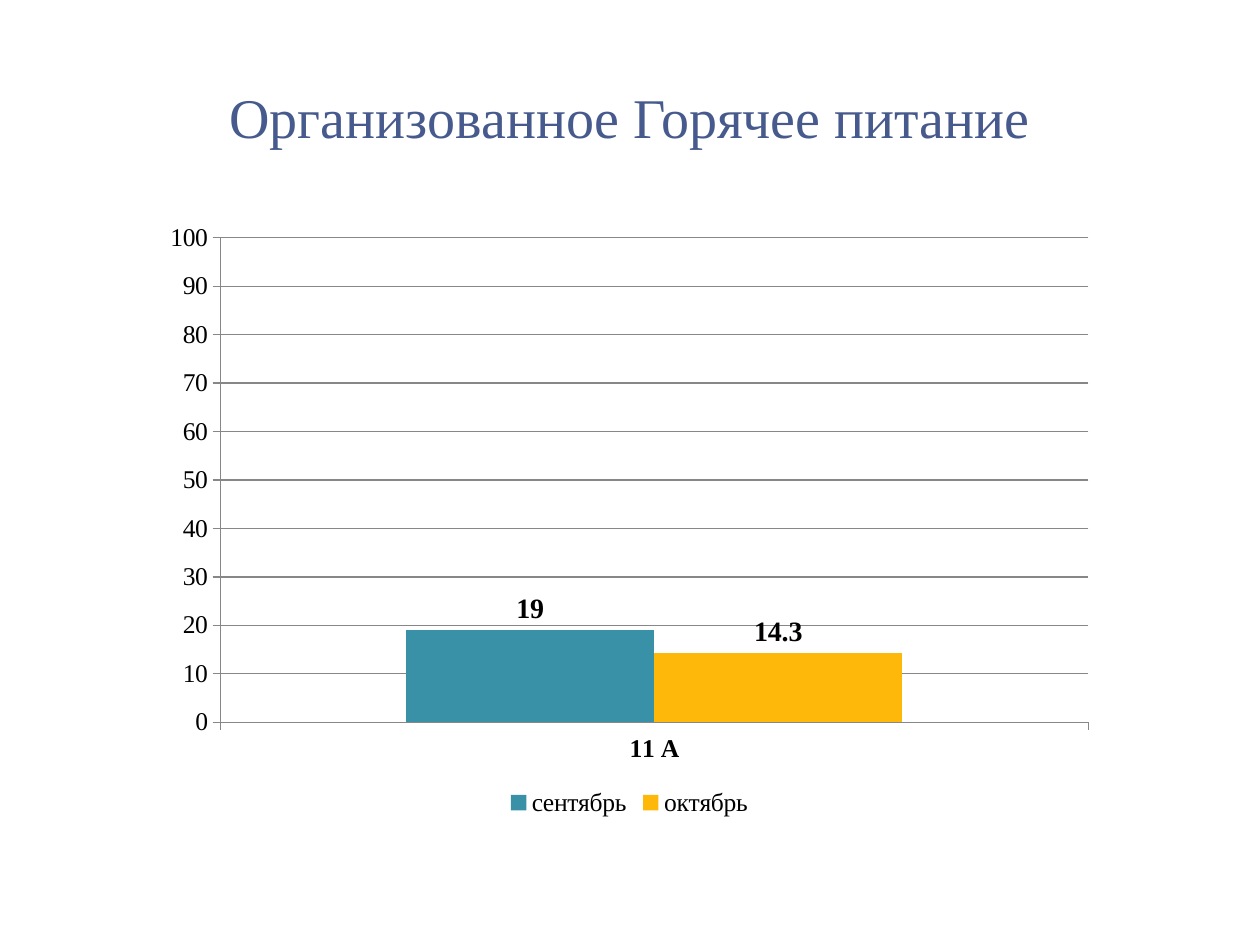
from pptx import Presentation
from pptx.chart.data import CategoryChartData
from pptx.dml.color import RGBColor
from pptx.enum.chart import (XL_CHART_TYPE, XL_LABEL_POSITION,
                             XL_LEGEND_POSITION, XL_TICK_MARK)
from pptx.enum.text import MSO_ANCHOR, PP_ALIGN
from pptx.util import Pt

FONT = "Times New Roman"
SERIES = [("сентябрь", 19, "3891A7"), ("октябрь", 14.3, "FEB80A")]


def rgb(value):
    """Turn a hex string into a colour."""
    return RGBColor.from_string(value)


def set_font(font, color="000000", **formats):
    """Apply the slide typeface, a colour and further font values."""
    for name, value in {"name": FONT, **formats}.items():
        setattr(font, name, value)
    font.color.rgb = rgb(color)


def set_line(line, color="878787", width=0.75):
    """Give a line its colour and width."""
    line.color.rgb = rgb(color)
    line.width = Pt(width)


def add_title(s, box, text):
    """Place the centred heading in the box."""
    tf = s.shapes.add_textbox(*map(Pt, box)).text_frame
    tf.word_wrap = True
    tf.vertical_anchor = MSO_ANCHOR.MIDDLE
    p = tf.paragraphs[0]
    p.alignment = PP_ALIGN.CENTER
    r = p.add_run()
    r.text = text
    set_font(r.font, "475A8D", size=Pt(32))


def add_meals_chart(s, box, category):
    """Place the column chart of monthly meal shares in the box."""
    data = CategoryChartData()
    data.categories = [category]
    for name, value, _ in SERIES:
        data.add_series(name, [value])
    chart = s.shapes.add_chart(
        XL_CHART_TYPE.COLUMN_CLUSTERED, *map(Pt, box), data).chart
    size = Pt(14.6)
    set_font(chart.font, size=size)
    chart.has_title = False
    chart.has_legend = True
    legend = chart.legend
    legend.position = XL_LEGEND_POSITION.BOTTOM
    legend.include_in_layout = False
    set_font(legend.font, size=size)

    for axis, bold in ((chart.category_axis, True), (chart.value_axis, False)):
        axis.major_tick_mark = XL_TICK_MARK.OUTSIDE
        set_line(axis.format.line)
        set_font(axis.tick_labels.font, size=size, bold=bold)
    scale = {"minimum_scale": 0, "maximum_scale": 100, "major_unit": 10,
             "has_major_gridlines": True}
    for name, value in scale.items():
        setattr(chart.value_axis, name, value)
    set_line(chart.value_axis.major_gridlines.format.line)

    plot = chart.plots[0]
    plot.gap_width, plot.overlap, plot.vary_by_categories = 150, 0, False
    for series, (_, _, color) in zip(plot.series, SERIES):
        series.format.fill.solid()
        series.format.fill.fore_color.rgb = rgb(color)
        labels = series.data_labels
        labels.show_value = True
        labels.position = XL_LABEL_POSITION.OUTSIDE_END
        set_font(labels.font, size=Pt(16), bold=True)


def main():
    """Build and save the slide."""
    prs = Presentation()
    prs.slide_width, prs.slide_height = Pt(720), Pt(540)
    s = prs.slides.add_slide(prs.slide_layouts[6])
    add_title(s, (36, 21.6, 648, 90), "Организованное Горячее питание")
    add_meals_chart(s, (86.4, 121, 546.5, 348.5), "11 А")
    prs.save("out.pptx")


if __name__ == "__main__":
    main()
